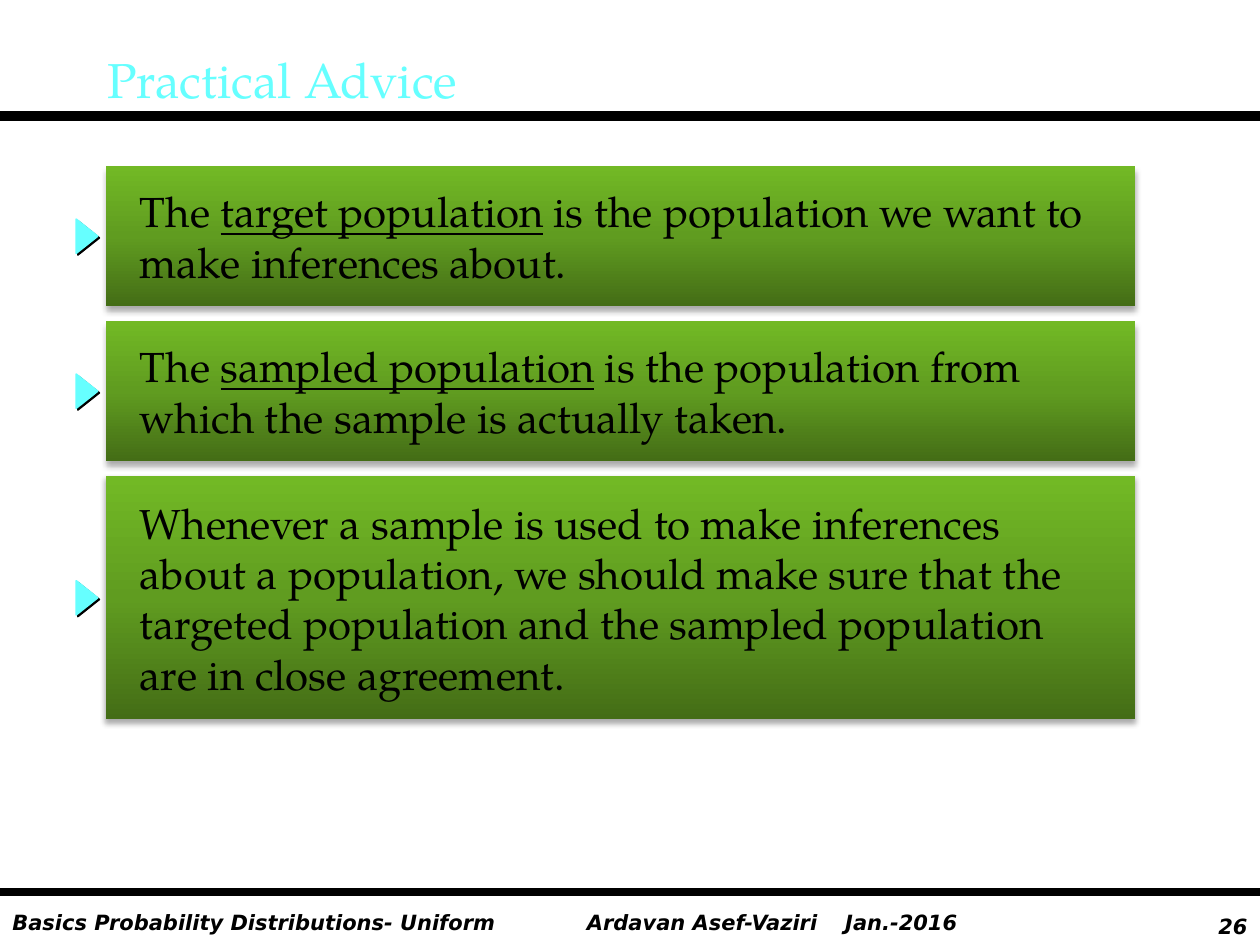
from lxml.etree import SubElement
from pptx import Presentation
from pptx.dml.color import RGBColor
from pptx.enum.shapes import MSO_CONNECTOR, MSO_SHAPE
from pptx.enum.text import MSO_ANCHOR, PP_ALIGN
from pptx.oxml.ns import qn
from pptx.util import Inches, Pt

BLACK = RGBColor(0x00, 0x00, 0x00)
CYAN = RGBColor(0x66, 0xFF, 0xFF)
GREENS = (RGBColor(0x44, 0x6D, 0x16), RGBColor(0x60, 0x9C, 0x20), RGBColor(0x72, 0xB9, 0x25))
SERIF, SANS = "TeX Gyre Pagella", "DejaVu Sans"
WIDTH, HEIGHT = 10, 7.5

PANEL_LEFT, PANEL_TOP, PANEL_WIDTH, PANEL_GAP = 0.84, 1.32, 8.17, 0.12
LINE_HEIGHT, PANEL_PADDING = 0.41, 0.29
POINTER_BASE, POINTER_HEIGHT, POINTER_CENTER = 0.27, 0.17, 0.69

# Each statement is a list of lines; each line is a list of (text, underlined) runs.
STATEMENTS = [
    [[("The ", False), ("target population", True), (" is the population we want to", False)],
     [("make inferences about.", False)]],
    [[("The ", False), ("sampled population", True), (" is the population from", False)],
     [("which the sample is actually taken.", False)]],
    [[("Whenever a sample is used to make inferences", False)],
     [("about a population, we should make sure that the", False)],
     [("targeted population and the sampled population", False)],
     [("are in close agreement.", False)]],
]


def write(frame, lines, size, font=SERIF, color=BLACK, bold=False, italic=False,
          align=PP_ALIGN.LEFT, anchor=MSO_ANCHOR.TOP, wrap=True, indent=0.1):
    frame.word_wrap = wrap
    frame.vertical_anchor = anchor
    frame.margin_left = Inches(indent)
    for index, line in enumerate(lines):
        paragraph = frame.add_paragraph() if index else frame.paragraphs[0]
        paragraph.alignment = align
        for text, underlined in line:
            run = paragraph.add_run()
            run.text = text
            run.font.size, run.font.name = Pt(size), font
            run.font.bold, run.font.italic = bold, italic
            run.font.underline = underlined
            run.font.color.rgb = color


def cast_shadow(shape, opacity, blur, distance, angle):
    shape.shadow.inherit = False
    effects = shape._element.spPr.find(qn("a:effectLst"))
    shadow = SubElement(effects, qn("a:outerShdw"), blurRad=str(Pt(blur)),
                        dist=str(Pt(distance)), dir=str(angle * 60000), rotWithShape="0")
    tint = SubElement(shadow, qn("a:srgbClr"), val=str(BLACK))
    SubElement(tint, qn("a:alpha"), val=str(opacity * 1000))


def fill_gradient(shape, colors):
    shape.fill.gradient()
    shape.fill.gradient_angle = 90
    stops = shape._element.spPr.find(qn("a:gradFill")).find(qn("a:gsLst"))
    for stop in list(stops):
        stops.remove(stop)
    for index, color in enumerate(colors):
        stop = SubElement(stops, qn("a:gs"), pos=str(100000 * index // (len(colors) - 1)))
        SubElement(stop, qn("a:srgbClr"), val=str(color))


def add_rule(slide, y, weight):
    rule = slide.shapes.add_connector(MSO_CONNECTOR.STRAIGHT, 0, Inches(y), Inches(WIDTH), Inches(y))
    rule.line.color.rgb = BLACK
    rule.line.width = Pt(weight)
    SubElement(rule._element.spPr, qn("a:effectLst"))


def add_header(slide, left, top, width, height):
    title = slide.shapes.title
    title.left, title.top, title.width, title.height = map(Inches, (left, top, width, height))
    write(title.text_frame, [[("Practical Advice", False)]], 28, color=CYAN,
          anchor=MSO_ANCHOR.MIDDLE)
    add_rule(slide, 0.92, 6)


def add_statement(slide, lines, left, top, width, height):
    """Gradient panel with a pointer centred on its left side."""
    panel = slide.shapes.add_shape(MSO_SHAPE.RECTANGLE, *map(Inches, (left, top, width, height)))
    fill_gradient(panel, GREENS)
    panel.line.fill.background()
    cast_shadow(panel, 32, 3.5, 2.2, 90)
    write(panel.text_frame, lines, 24, anchor=MSO_ANCHOR.MIDDLE, wrap=False, indent=0.27)

    pointer = slide.shapes.add_shape(
        MSO_SHAPE.ISOSCELES_TRIANGLE, Inches(POINTER_CENTER - POINTER_BASE / 2),
        Inches(top + (height - POINTER_HEIGHT) / 2), Inches(POINTER_BASE), Inches(POINTER_HEIGHT))
    pointer.rotation = 90
    pointer.fill.solid()
    pointer.fill.fore_color.rgb = CYAN
    pointer.line.color.rgb = CYAN
    pointer.line.width = Pt(1)
    cast_shadow(pointer, 100, 0, 1.4, 45)


def add_statements(slide, left, top, width):
    for lines in STATEMENTS:
        height = PANEL_PADDING + LINE_HEIGHT * len(lines)
        add_statement(slide, lines, left, top, width, height)
        top += height + PANEL_GAP


def add_footer(slide, top):
    add_rule(slide, top, 4.5)
    entries = [
        ("Basics Probability Distributions- Uniform", 0, 0.09, 4.67, PP_ALIGN.LEFT),
        ("Ardavan Asef-Vaziri\tJan.-2016", 4.56, 0.09, 3.35, PP_ALIGN.LEFT),
        ("26", 9.25, 0.12, 0.75, PP_ALIGN.RIGHT),
    ]
    for text, left, offset, width, align in entries:
        entry = slide.shapes.add_textbox(*map(Inches, (left, top + offset, width, 0.3)))
        write(entry.text_frame, [[(text, False)]], 12, font=SANS, bold=True, italic=True, align=align)
        if "\t" in text:
            properties = entry.text_frame.paragraphs[0]._p.get_or_add_pPr()
            tabs = SubElement(properties, qn("a:tabLst"))
            SubElement(tabs, qn("a:tab"), pos=str(Inches(2.05)), algn="l")


def main():
    deck = Presentation()
    deck.slide_width, deck.slide_height = Inches(WIDTH), Inches(HEIGHT)
    slide = deck.slides.add_slide(deck.slide_layouts[5])
    add_header(slide, 0.75, 0.27, 8.5, 0.71)
    add_statements(slide, PANEL_LEFT, PANEL_TOP, PANEL_WIDTH)
    add_footer(slide, 7.08)
    deck.save("out.pptx")


if __name__ == "__main__":
    main()
